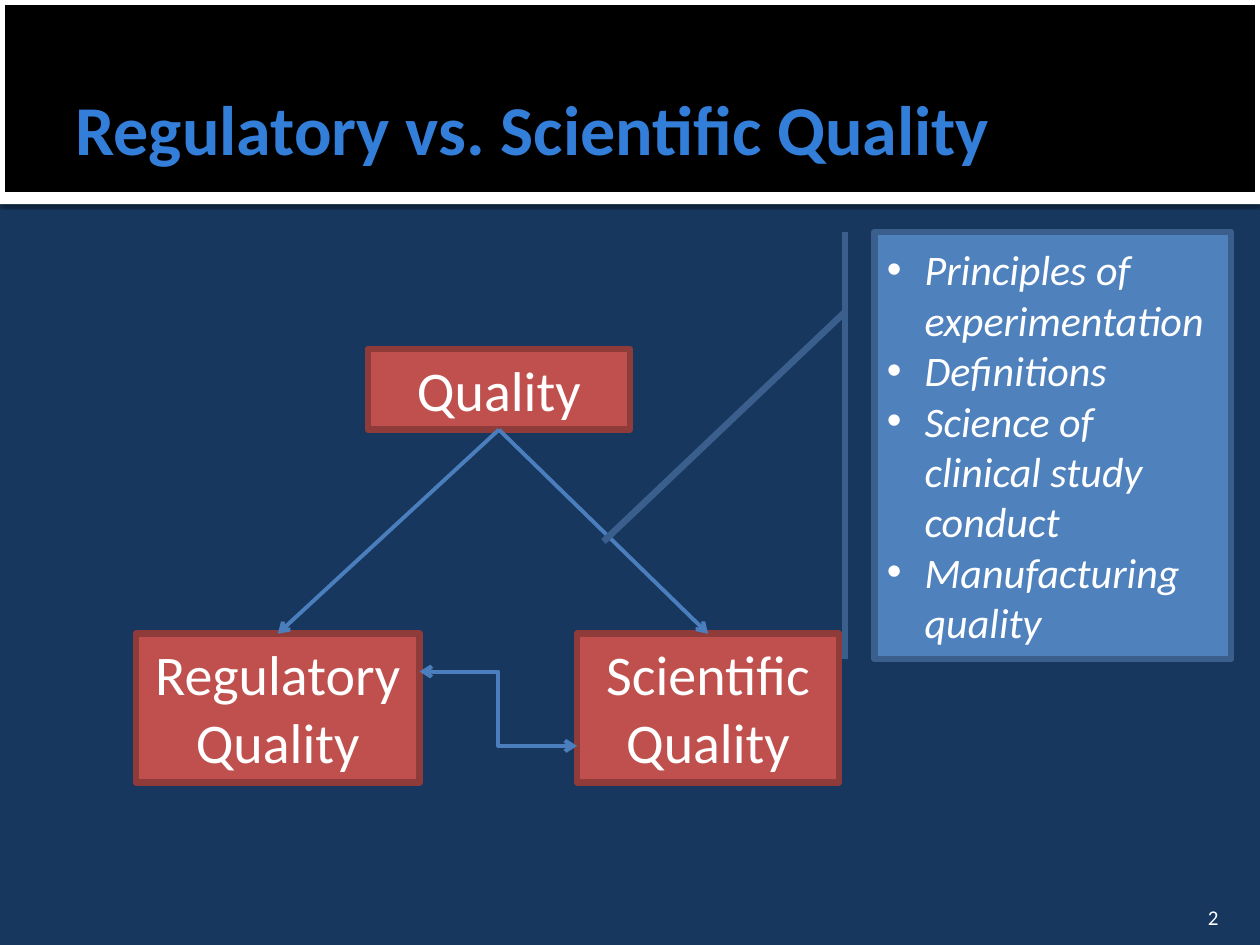
from dataclasses import dataclass
from lxml.etree import SubElement
from pptx import Presentation
from pptx.dml.color import RGBColor
from pptx.enum.shapes import MSO_CONNECTOR, MSO_SHAPE
from pptx.enum.text import MSO_ANCHOR, MSO_AUTO_SIZE, PP_ALIGN
from pptx.oxml.ns import qn
from pptx.util import Inches, Pt


@dataclass
class Theme:
    font: str = "Calibri"
    back: str = "17375E"
    white: str = "FFFFFF"
    black: str = "000000"
    title: str = "337ED9"
    red: str = "C0504D"
    rim: str = "8E3B39"
    blue: str = "4F81BD"
    edge: str = "3A5F8C"
    arrow: str = "4B7EBC"
    head: int = 40
    node: int = 32
    note: int = 24
    page: int = 12


theme = Theme()
color = RGBColor.from_string

deck = Presentation()
deck.slide_width, deck.slide_height = Inches(10), Inches(7.5)
slide = deck.slides.add_slide(deck.slide_layouts[6])
slide.background.fill.solid()
slide.background.fill.fore_color.rgb = color(theme.back)
shapes = slide.shapes


def draw(kind, place, fill, line=None, width=3.78):
    shape = shapes.add_shape(kind, *map(Inches, place))
    shape.shadow.inherit = False
    shape.fill.solid()
    shape.fill.fore_color.rgb = color(fill)
    if line:
        shape.line.color.rgb = color(line)
        shape.line.width = Pt(width)
    else:
        shape.line.fill.background()
    return shape


def write(shape, lines, size, align, anchor=MSO_ANCHOR.MIDDLE, tint=theme.white):
    frame = shape.text_frame
    frame.word_wrap = True
    frame.vertical_anchor = anchor
    for i, line in enumerate(lines):
        para = frame.add_paragraph() if i else frame.paragraphs[0]
        para.alignment = align
        run = para.add_run()
        run.text = line
        run.font.name = theme.font
        run.font.size = Pt(size)
        run.font.color.rgb = color(tint)
    return frame


band = draw(MSO_SHAPE.RECTANGLE, (0, 1.57, 10, 0.05), theme.white)
glow = SubElement(
    band._element.spPr.find(qn("a:effectLst")), qn("a:outerShdw"),
    blurRad=str(Pt(2.5)), dist=str(Pt(0.8)), dir="5400000", rotWithShape="0",
)
shade = SubElement(glow, qn("a:srgbClr"), val=theme.black)
SubElement(shade, qn("a:alpha"), val="60000")
draw(MSO_SHAPE.RECTANGLE, (0, 0, 10, 1.57), theme.black, theme.white, 6)

title = shapes.add_textbox(Inches(0.5), Inches(0.33), Inches(9), Inches(1.37))
frame = write(title, ["Regulatory vs. Scientific Quality"], theme.head,
              PP_ALIGN.LEFT, tint=theme.title)
frame.margin_right = Inches(0.05)
frame.paragraphs[0].runs[0].font.bold = True

page = shapes.add_textbox(Inches(8.97), Inches(7.08), Inches(0.8), Inches(0.3))
frame = write(page, ["2"], theme.page, PP_ALIGN.RIGHT, MSO_ANCHOR.BOTTOM)
frame.margin_bottom = 0

nodes = []
for place, lines, anchor in (
    ((2.92, 2.77, 2.08, 0.64), ["Quality"], MSO_ANCHOR.MIDDLE),
    ((1.08, 5.03, 2.25, 1.18), ["Regulatory", "Quality"], MSO_ANCHOR.TOP),
    ((4.58, 5.03, 2.08, 1.18), ["Scientific", "Quality"], MSO_ANCHOR.TOP),
):
    node = draw(MSO_SHAPE.RECTANGLE, place, theme.red, theme.rim)
    frame = write(node, lines, theme.node, PP_ALIGN.CENTER, anchor)
    frame.auto_size = MSO_AUTO_SIZE.SHAPE_TO_FIT_TEXT
    nodes.append(node)
root, left, right = nodes
para = root.text_frame.paragraphs[0]
para.space_before = para.space_after = Pt(6)

bent = shapes.add_connector(
    MSO_CONNECTOR.ELBOW, Inches(3.33), Inches(5.33), Inches(4.58), Inches(5.92))
links = [(bent, ("headEnd", "tailEnd"))]
for node in (left, right):
    link = shapes.add_connector(MSO_CONNECTOR.STRAIGHT, 0, 0, 0, 0)
    link.begin_connect(root, 2)
    link.end_connect(node, 0)
    links.append((link, ("tailEnd",)))
for link, ends in links:
    link.line.color.rgb = color(theme.arrow)
    link.line.width = Pt(2.25)
    for end in ends:
        SubElement(link.line._get_or_add_ln(), qn(f"a:{end}"), type="arrow")
    SubElement(link._element.spPr, qn("a:effectLst"))

note = draw(MSO_SHAPE.LINE_CALLOUT_1_BORDER_AND_ACCENT_BAR,
            (6.94, 1.84, 2.83, 3.39), theme.blue, theme.edge)
for i, value in enumerate((0.188, -0.083, 0.725, -0.76)):
    note.adjustments[i] = value
frame = write(note, ["Principles of experimentation", "Definitions",
                     "Science of clinical study conduct", "Manufacturing quality"],
              theme.note, PP_ALIGN.LEFT)
for para in frame.paragraphs:
    para.runs[0].font.italic = True
    props = para._p.get_or_add_pPr()
    props.set("marL", str(Inches(0.3)))
    props.set("indent", str(-Inches(0.3)))
    SubElement(props, qn("a:buFont"), typeface="Arial")
    SubElement(props, qn("a:buChar"), char="•")

deck.save("out.pptx")
